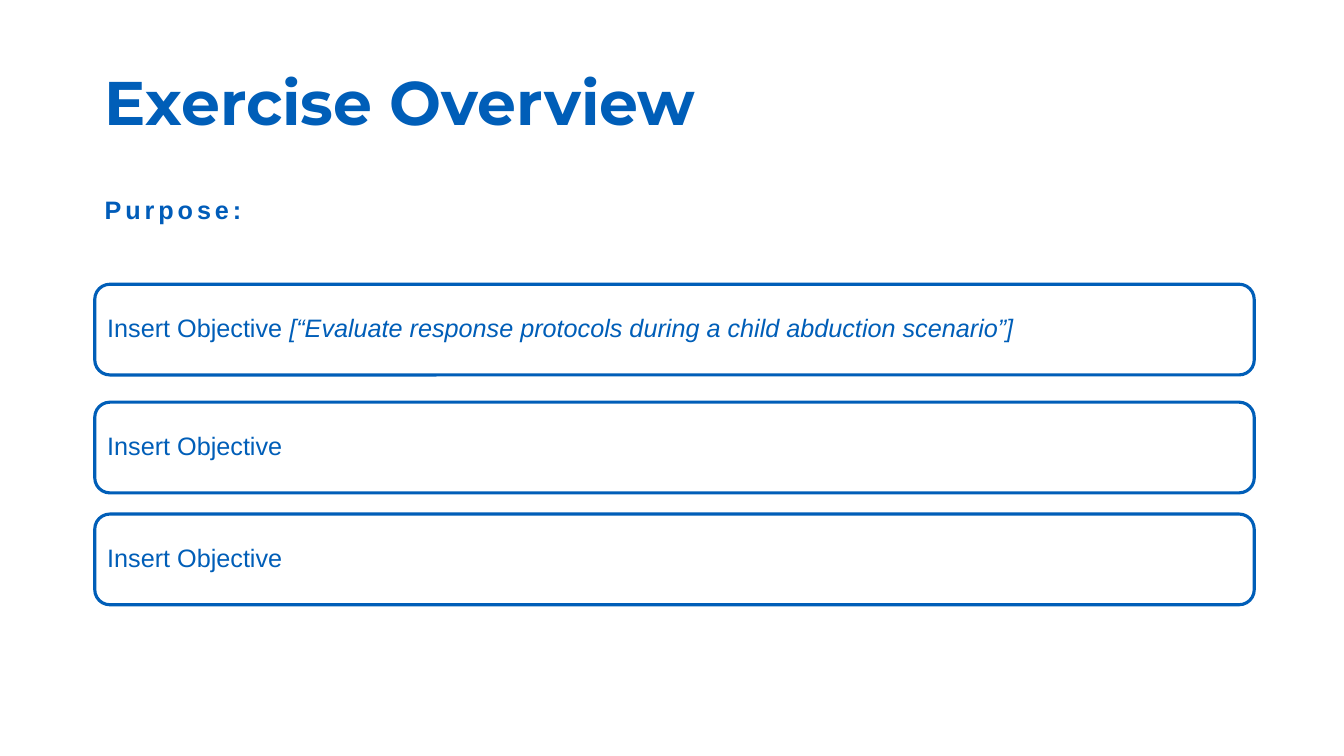
from pptx import Presentation
from pptx.dml.color import RGBColor
from pptx.enum.shapes import MSO_SHAPE
from pptx.enum.text import MSO_ANCHOR, PP_ALIGN
from pptx.util import Inches, Pt

ROUNDED = MSO_SHAPE.ROUNDED_RECTANGLE
MIDDLE = MSO_ANCHOR.MIDDLE
LEFT = PP_ALIGN.LEFT

BLUE = RGBColor(0x00, 0x5E, 0xB8)
LABEL_BLUE = RGBColor(0x00, 0x5C, 0xB9)
WHITE = RGBColor(0xFF, 0xFF, 0xFF)

SLIDE_WIDTH, SLIDE_HEIGHT = 13.33, 7.5
MARGIN = 0.94
CONTENT_WIDTH = 11.5
CARD_HEIGHT = 0.9
CARD_INSET = 0.12

# Top of each card, with its plain text and its italic example
OBJECTIVES = [
    (2.82, "Insert Objective ",
     "[“Evaluate response protocols during a child abduction scenario”]"),
    (3.99, "Insert Objective", ""),
    (5.1, "Insert Objective", ""),
]


def style_span(span, size, color=BLUE, name="Arial", bold=False, italic=False):
    font = span.font
    font.name, font.size = name, Pt(size)
    font.bold, font.italic = bold, italic
    font.color.rgb = color


def add_text(page, text, top, width, height, size, **style):
    """Add a one-line text box at the left margin and return it."""
    box = page.shapes.add_textbox(
        Inches(MARGIN), Inches(top), Inches(width), Inches(height))
    frame = box.text_frame
    frame.word_wrap = True
    frame.text = text
    style_span(frame.paragraphs[0].runs[0], size, **style)
    return box


def add_title(page, text):
    box = add_text(page, text, 0.32, CONTENT_WIDTH, 1.45, 44,
                   name="Montserrat", bold=True)
    box.text_frame.vertical_anchor = MIDDLE
    box.text_frame.paragraphs[0].line_spacing = 0.9


def add_label(page, text):
    """Add a bold heading with widely spaced letters."""
    box = add_text(page, text, 1.88, CONTENT_WIDTH * 0.58, 0.4, 18,
                   color=LABEL_BLUE, bold=True)
    span = box.text_frame.paragraphs[0].runs[0]
    span.font._element.set("spc", "280")


def add_objective_card(page, top, text, example):
    card = page.shapes.add_shape(
        ROUNDED, Inches(MARGIN), Inches(top),
        Inches(CONTENT_WIDTH), Inches(CARD_HEIGHT))
    card.shadow.inherit = False
    card.fill.solid()
    card.fill.fore_color.rgb = WHITE
    card.line.color.rgb = BLUE
    card.line.width = Pt(2.25)

    frame = card.text_frame
    frame.word_wrap = True
    frame.vertical_anchor = MIDDLE
    # The rounded corners already indent the text slightly
    frame.margin_left = frame.margin_right = Inches(CARD_INSET - 0.04)
    para = frame.paragraphs[0]
    para.text = text
    para.alignment = LEFT
    para.line_spacing = 0.9
    style_span(para.runs[0], 18)
    if example:
        span = para.add_run()
        span.text = example
        style_span(span, 18, italic=True)


def main():
    deck = Presentation()
    deck.slide_width = Inches(SLIDE_WIDTH)
    deck.slide_height = Inches(SLIDE_HEIGHT)
    page = deck.slides.add_slide(deck.slide_layouts[6])

    add_title(page, "Exercise Overview")
    add_label(page, "Purpose:")
    for top, text, example in OBJECTIVES:
        add_objective_card(page, top, text, example)

    deck.save("out.pptx")


if __name__ == "__main__":
    main()
